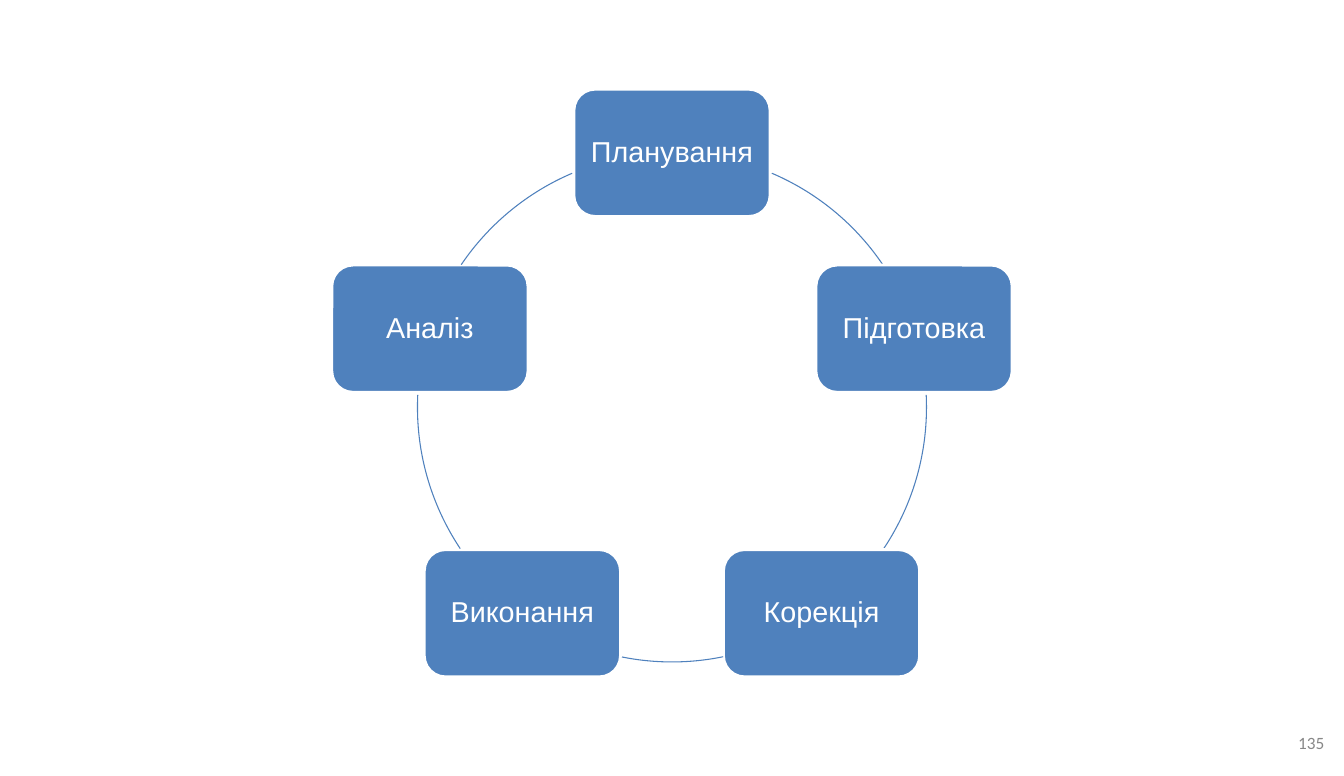
from math import cos, radians, sin
from pptx import Presentation
from pptx.dml.color import RGBColor
from pptx.enum.shapes import MSO_SHAPE
from pptx.enum.text import MSO_ANCHOR, PP_ALIGN
from pptx.util import Inches, Pt

theme = {
    "blue": RGBColor.from_string("4F81BD"),
    "white": RGBColor.from_string("FFFFFF"),
    "gray": RGBColor.from_string("888888"),
    "step": Pt(20),
    "page": Pt(12),
    "edge": Pt(2),
    "ring": Pt(0.75),
}

deck = Presentation()
deck.slide_width = wide = Inches(12.99)
deck.slide_height = high = Inches(7.5)
slide = deck.slides.add_slide(deck.slide_layouts[6])
shapes = slide.shapes


def style(item, form):
    for name, value in form.items():
        setattr(item, name, value)


def write(shape, text, align, pad, font):
    frame = shape.text_frame
    style(frame, {
        "word_wrap": True,
        "vertical_anchor": MSO_ANCHOR.MIDDLE,
        "margin_left": pad,
        "margin_right": pad,
    })
    line = frame.paragraphs[0]
    line.text = text
    line.alignment = align
    color = font.pop("color")
    style(line.font, font)
    line.font.color.rgb = color
    return line


mid_x, mid_y = wide * 0.5, high * 0.525
radius = high * 0.328
box_w, box_h = wide * 0.146, high * 0.164

steps = ["Планування", "Підготовка", "Корекція", "Виконання", "Аналіз"]
arcs = [(293.1, 325.9), (357.2, 33.7), (78.4, 101.6), (146.3, 182.8), (214.1, 246.9)]

for i, (step, arc) in enumerate(zip(steps, arcs)):
    turn = radians(360 / len(steps) * i - 90)
    left = mid_x + radius * cos(turn) - box_w / 2
    top = mid_y + radius * sin(turn) - box_h / 2
    box = shapes.add_shape(
        MSO_SHAPE.ROUNDED_RECTANGLE, int(left), int(top), int(box_w), int(box_h))
    box.shadow.inherit = False
    box.fill.solid()
    box.fill.fore_color.rgb = theme["blue"]
    box.line.color.rgb = theme["white"]
    box.line.width = theme["edge"]
    label = write(box, step, PP_ALIGN.CENTER, Inches(0.08), {
        "name": "Arial", "size": theme["step"], "color": theme["white"]})
    label.line_spacing = 0.9

    curve = shapes.add_shape(
        MSO_SHAPE.ARC, int(mid_x - radius), int(mid_y - radius),
        int(radius * 2), int(radius * 2))
    curve.shadow.inherit = False
    curve.fill.background()
    curve.line.color.rgb = theme["blue"]
    curve.line.width = theme["ring"]
    for j, angle in enumerate(arc):
        curve.adjustments[j] = angle * 0.6

page = shapes.add_textbox(
    int(wide * 0.948), int(high * 0.931), int(wide * 0.045), int(high * 0.052))
write(page, "135", PP_ALIGN.RIGHT, Inches(0.1), {
    "name": "Calibri", "size": theme["page"], "color": theme["gray"]})

deck.save("out.pptx")
